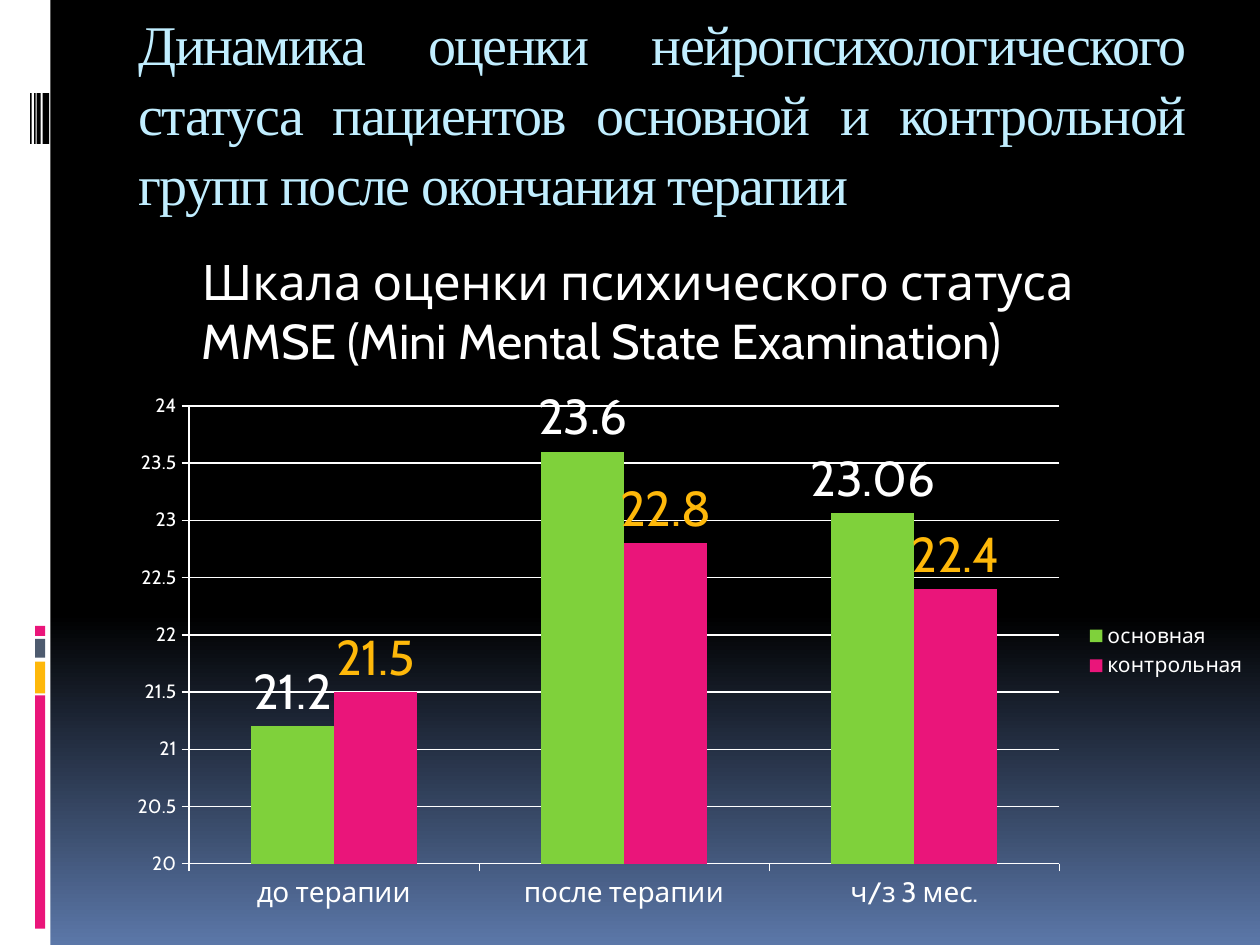
from copy import deepcopy

from lxml.etree import SubElement
from pptx import Presentation
from pptx.chart.data import CategoryChartData
from pptx.dml.color import RGBColor
from pptx.enum.chart import XL_CHART_TYPE as ChartType
from pptx.enum.chart import XL_LABEL_POSITION as LabelPos
from pptx.enum.chart import XL_LEGEND_POSITION as LegendPos
from pptx.enum.chart import XL_TICK_MARK as Tick
from pptx.enum.shapes import MSO_SHAPE as Shape
from pptx.enum.text import MSO_ANCHOR as Anchor
from pptx.enum.text import MSO_AUTO_SIZE as AutoSize
from pptx.enum.text import PP_ALIGN as Align
from pptx.oxml.ns import qn
from pptx.util import Cm, Pt

COLORS = {
    "white": "FFFFFF", "black": "000000", "blue": "5B77A8", "slate": "4E5B6F",
    "pink": "EA157A", "amber": "FEB80A", "green": "7FD13B", "sky": "C1EEFF",
}
STRIPES = [("pink", 12.62, 0.2), ("slate", 12.88, 0.38),
           ("amber", 13.34, 0.64), ("pink", 14.02, 4.7)]
BARCODE = [(0.61, 0.03), (0.69, 0.03), (0.74, 0.08), (0.86, 0.13)]
PERIODS = ["до терапии", "после терапии", "ч/з 3 мес."]
GROUPS = [("основная", [21.2, 23.6, 23.06], "green", "white"),
          ("контрольная", [21.5, 22.8, 22.4], "pink", "amber")]
PLOT_AREA = {"x": 0.065, "y": 0.043, "w": 0.76, "h": 0.855}


def rgb(color):
    """Return the named colour."""
    return RGBColor.from_string(COLORS[color])


def style_font(font, size, color="white", name="Cabin"):
    """Set size, colour and typeface of a font."""
    font.size, font.name = Pt(size), name
    font.color.rgb = rgb(color)


def write(holder, text, box, size, color="white", name="Cabin", align=Align.LEFT,
          anchor=Anchor.TOP, indent=0, before=0, spacing=1.0, tracking=0):
    """Place a placeholder in its box and fill it with one formatted paragraph."""
    holder.left, holder.top, holder.width, holder.height = map(Cm, box)
    frame = holder.text_frame
    frame.word_wrap, frame.auto_size = True, AutoSize.NONE
    frame.vertical_anchor = anchor
    paragraph = frame.paragraphs[0]
    paragraph.alignment, paragraph.line_spacing = align, spacing
    paragraph.space_before = Pt(before)
    properties = paragraph._p.get_or_add_pPr()
    properties.set("marL", str(Cm(indent)))
    properties.set("indent", "0")
    SubElement(properties, qn("a:buNone"))
    run = paragraph.add_run()
    run.text = text
    style_font(run.font, size, color, name)
    run.font._element.set("spc", str(tracking * 100))


def paint_background(slide):
    """Fill the slide with a black to blue vertical gradient."""
    fill = slide.background.fill
    fill.gradient()
    fill.gradient_angle = 270
    first = fill._fill._gradFill.gsLst[0]
    first.addnext(deepcopy(first))
    for stop, (position, color) in zip(
            fill.gradient_stops, [(0, "black"), (0.65, "black"), (1, "blue")]):
        stop.position = position
        stop.color.rgb = rgb(color)


def add_bar(slide, color, left, top, width, height):
    """Add a plain filled rectangle."""
    bar = slide.shapes.add_shape(Shape.RECTANGLE, *map(Cm, (left, top, width, height)))
    bar.shadow.inherit = False
    bar.fill.solid()
    bar.fill.fore_color.rgb = rgb(color)
    bar.line.fill.background()


def add_sidebar(slide, left, top, width, height):
    """Draw the white side band with its stripes and barcode."""
    add_bar(slide, "white", left, top, width, height)
    for color, offset, length in STRIPES:
        add_bar(slide, color, left + 0.71, top + offset, 0.2, length)
    for offset, thickness in BARCODE:
        add_bar(slide, "black", left + offset, top + 1.88, thickness, 1.02)


def style_axis(axis, size):
    """Give an axis white lines, outer ticks and its label size."""
    axis.major_tick_mark, axis.minor_tick_mark = Tick.OUTSIDE, Tick.NONE
    axis.format.line.color.rgb = rgb("white")
    axis.format.line.width = Pt(0.75)
    style_font(axis.tick_labels.font, size)


def fix_plot_area(chart):
    """Pin the inner plot area by fractions of the chart."""
    plot_area = chart._chartSpace.chart.plotArea
    layout = plot_area.find(qn("c:layout"))
    if layout is None:
        layout = SubElement(plot_area, qn("c:layout"))
        plot_area.insert(0, layout)
    manual = SubElement(layout, qn("c:manualLayout"))
    settings = {"layoutTarget": "inner", "xMode": "edge", "yMode": "edge", **PLOT_AREA}
    for tag, value in settings.items():
        SubElement(manual, qn(f"c:{tag}")).set("val", str(value))


def add_scores(slide, left, top, width, height):
    """Add the clustered column chart of MMSE scores."""
    data = CategoryChartData()
    data.categories = PERIODS
    for name, values, *_ in GROUPS:
        data.add_series(name, values)
    chart = slide.shapes.add_chart(
        ChartType.COLUMN_CLUSTERED, *map(Cm, (left, top, width, height)), data).chart
    chart.has_title = False
    style_font(chart.font, 10)
    fix_plot_area(chart)
    style_axis(chart.category_axis, 16)
    scale = chart.value_axis
    style_axis(scale, 11)
    scale.minimum_scale, scale.maximum_scale, scale.major_unit = 20, 24, 0.5
    scale.has_major_gridlines = True
    scale.major_gridlines.format.line.color.rgb = rgb("white")
    scale.major_gridlines.format.line.width = Pt(0.75)
    chart.has_legend = True
    chart.legend.position = LegendPos.RIGHT
    chart.legend.include_in_layout = False
    style_font(chart.legend.font, 12)
    plot = chart.plots[0]
    plot.gap_width, plot.overlap, plot.vary_by_categories = 150, 0, False
    for group, (_, _, color, label_color) in zip(plot.series, GROUPS):
        group.invert_if_negative = False
        group.format.fill.solid()
        group.format.fill.fore_color.rgb = rgb(color)
        labels = group.data_labels
        labels.show_value, labels.position = True, LabelPos.OUTSIDE_END
        style_font(labels.font, 28, label_color)


def main():
    """Build the slide and save it."""
    deck = Presentation()
    deck.slide_width, deck.slide_height = Cm(25.4), Cm(19.05)
    slide = deck.slides.add_slide(deck.slide_layouts[1])
    paint_background(slide)
    add_sidebar(slide, 0, 0, 1.02, 19.05)
    write(slide.shapes.title,
          "Динамика оценки нейропсихологического статуса пациентов "
          "основной и контрольной групп после окончания терапии",
          (2.54, 0, 21.6, 4.52), 32, "sky", "Times New Roman", Align.JUSTIFY,
          Anchor.MIDDLE, spacing=1.04, tracking=-1)
    write(slide.placeholders[1],
          "Шкала оценки психического статуса MMSE (Mini Mental State Examination)",
          (2.54, 4.95, 21.6, 12.7), 28, indent=1.27, before=5.6)
    add_scores(slide, 2.31, 7.72, 23.09, 10.8)
    deck.save("out.pptx")


if __name__ == "__main__":
    main()
